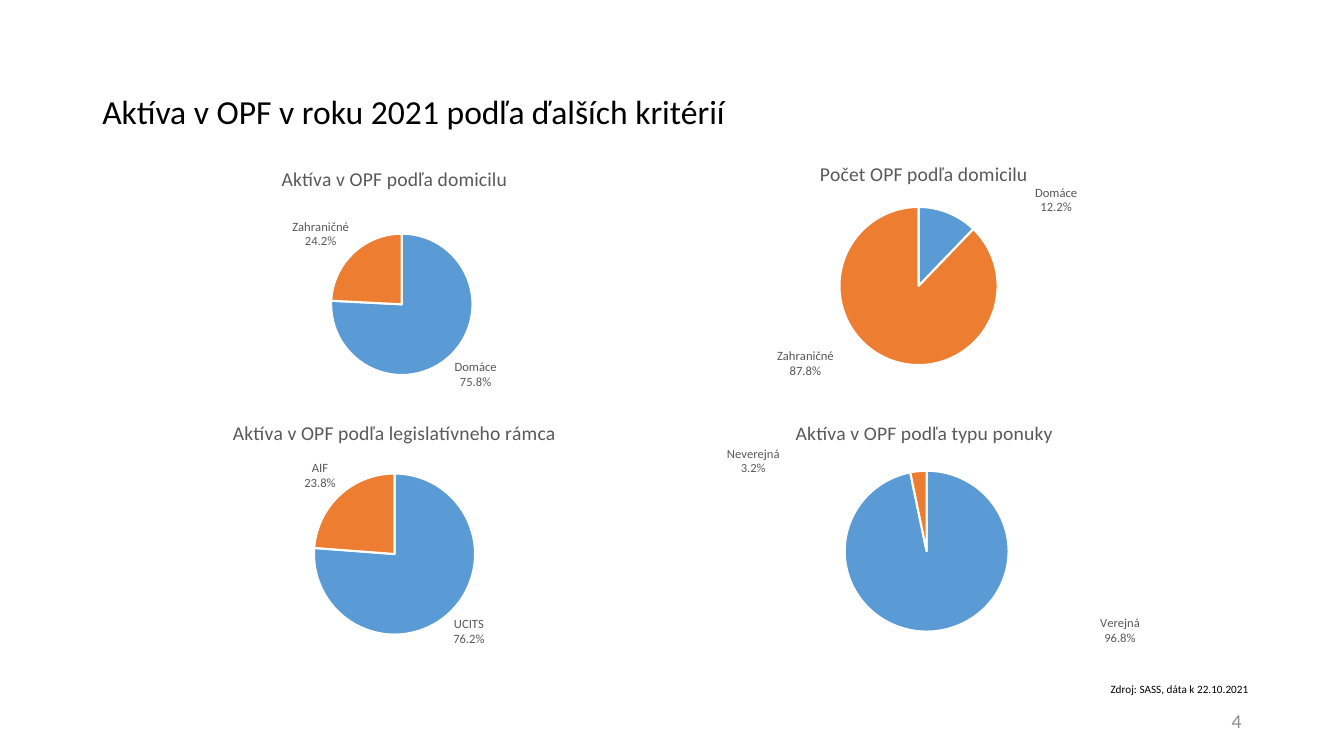
from copy import deepcopy

from lxml import etree
from pptx import Presentation
from pptx import util as u
from pptx.chart import data as chart_data
from pptx.dml import color
from pptx.enum import chart as chart_enum, text
from pptx.oxml import ns

COLORS = {
    "text": "000000",
    "muted": "595959",
    "number": "8C8C8C",
    "first": "5B9BD5",
    "second": "ED7D31",
    "gap": "FFFFFF",
}
FONT = "Calibri"


def set_font(font, size, color_name):
    """Apply typeface, size, weight and colour to a font."""
    for name, value in {"name": FONT, "size": u.Pt(size), "bold": False}.items():
        setattr(font, name, value)
    font.color.rgb = color.RGBColor.from_string(COLORS[color_name])


def add_text(slide, box, wording, size, color_name, frame_format, paragraph_format):
    """Place one paragraph of text in a box."""
    shape = slide.shapes.add_textbox(*map(u.Pt, box))
    frame = shape.text_frame
    paragraph = frame.paragraphs[0]
    for target, values in ((frame, frame_format), (paragraph, paragraph_format)):
        for name, value in values.items():
            setattr(target, name, value)
    run = paragraph.add_run()
    run.text = wording
    set_font(run.font, size, color_name)


def make_layout(**values):
    """Return a manual chart layout element."""
    layout = etree.Element(ns.qn("c:layout"))
    manual = etree.SubElement(layout, ns.qn("c:manualLayout"))
    for name, value in values.items():
        etree.SubElement(manual, ns.qn("c:" + name)).set("val", str(value))
    return layout


def set_plot_area(chart, area):
    """Fix the inner plot area as fractions of the chart."""
    plot_area = chart._chartSpace.chart.plotArea
    for layout in plot_area.findall(ns.qn("c:layout")):
        plot_area.remove(layout)
    x, y, w, h = area
    plot_area.insert(0, make_layout(
        layoutTarget="inner", xMode="edge", yMode="edge", x=x, y=y, w=w, h=h))


def format_labels(series, offsets):
    """Show category and percentage, moving labels by the given offsets."""
    labels = series.data_labels
    for name, value in {
        "show_value": False,
        "show_category_name": True,
        "show_percentage": True,
        "number_format": "0.0%",
        "number_format_is_linked": False,
        "position": chart_enum.XL_LABEL_POSITION.OUTSIDE_END,
    }.items():
        setattr(labels, name, value)
    set_font(labels.font, 9, "muted")
    root = labels._element
    for leader in root.findall(ns.qn("c:showLeaderLines")):
        root.remove(leader)
    separator = etree.SubElement(root, ns.qn("c:separator"))
    separator.text = "\n"
    shared = list(root)
    for index, (x, y) in enumerate(offsets):
        label = etree.Element(ns.qn("c:dLbl"))
        etree.SubElement(label, ns.qn("c:idx")).set("val", str(index))
        label.append(make_layout(x=x, y=y))
        label.extend(deepcopy(part) for part in shared)
        root.insert(index, label)
    etree.SubElement(root, ns.qn("c:showLeaderLines")).set("val", "0")


def add_pie(slide, box, title, values, area=None, offsets=()):
    """Place a titled two-slice pie chart in a box."""
    source = chart_data.CategoryChartData()
    source.categories = list(values)
    source.add_series(title, list(values.values()))
    chart = slide.shapes.add_chart(
        chart_enum.XL_CHART_TYPE.PIE, *map(u.Pt, box), source).chart
    set_font(chart.font, 10, "text")
    chart.has_legend = False
    chart.has_title = True
    chart.chart_title.include_in_layout = False
    paragraph = chart.chart_title.text_frame.paragraphs[0]
    run = paragraph.add_run()
    run.text = title
    set_font(run.font, 14, "muted")
    plot = chart.plots[0]
    plot.vary_by_categories = True
    series = plot.series[0]
    for index, name in enumerate(("first", "second")):
        slice_format = series.points[index].format
        slice_format.fill.solid()
        slice_format.fill.fore_color.rgb = color.RGBColor.from_string(COLORS[name])
        slice_format.line.color.rgb = color.RGBColor.from_string(COLORS["gap"])
        slice_format.line.width = u.Pt(1.5)
    format_labels(series, offsets)
    if area:
        set_plot_area(chart, area)


def add_charts(slide, left, top, width, height):
    """Arrange the four pies in two columns and two rows."""
    right, lower = left + width, top + height
    add_pie(slide, (left, top + 3.6, width, height),
            "Aktíva v OPF podľa domicilu", {"Domáce": 75.8, "Zahraničné": 24.2})
    add_pie(slide, (right, lower, width + 2, height),
            "Aktíva v OPF podľa typu ponuky", {"Verejná": 96.8, "Neverejná": 3.2},
            (0.105, 0.254, 0.798, 0.631), ((0.31, -0.08), (-0.26, 0.04)))
    add_pie(slide, (right, top, width + 1, height),
            "Počet OPF podľa domicilu", {"Domáce": 12.2, "Zahraničné": 87.8},
            (0.04, 0.234, 0.9, 0.609), ((0.16, 0.03), (-0.1, -0.06)))
    add_pie(slide, (left, lower - 0.7, width, height),
            "Aktíva v OPF podľa legislatívneho rámca", {"UCITS": 76.2, "AIF": 23.8},
            (0.105, 0.264, 0.79, 0.62))


def main():
    """Build and save the slide."""
    presentation = Presentation()
    presentation.slide_width, presentation.slide_height = u.Pt(960), u.Pt(540)
    slide = presentation.slides.add_slide(presentation.slide_layouts[6])
    middle = {"word_wrap": True, "vertical_anchor": text.MSO_ANCHOR.MIDDLE}
    add_text(slide, (66, 28.8, 828, 104.4),
             "Aktíva v OPF v roku 2021 podľa ďalších kritérií", 24, "text",
             middle, {"line_spacing": 0.9})
    add_text(slide, (678, 500.4, 216, 28.8), "4", 14, "number",
             middle, {"alignment": text.PP_ALIGN.RIGHT})
    add_text(slide, (786.2, 483.8, 116.6, 17.3), "Zdroj: SASS, dáta k 22.10.2021",
             8, "text", {"word_wrap": False}, {})
    add_charts(slide, 93, 104.4, 377.6, 185.6)
    presentation.save("out.pptx")


if __name__ == "__main__":
    main()
